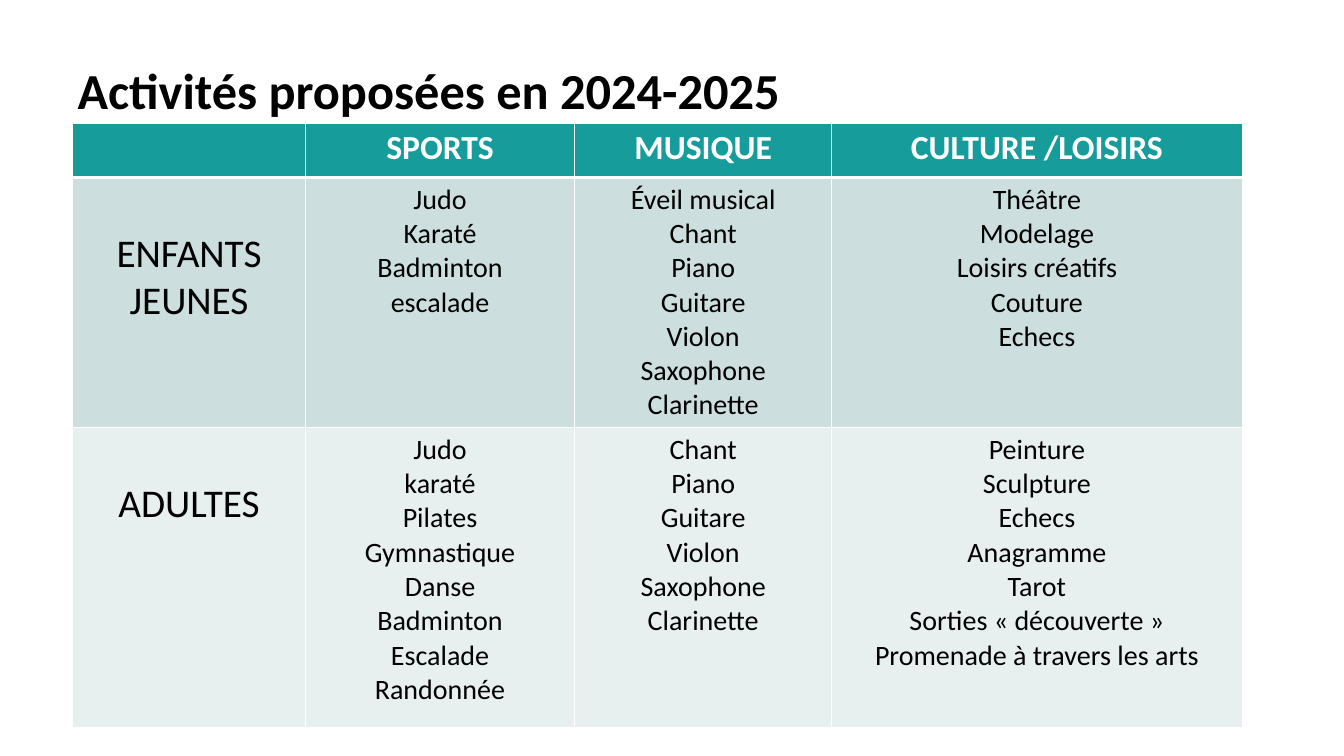
"""Build a slide with a table of the activities offered in 2024-2025."""
import pptx
import pptx.dml.color
import pptx.enum.text
import pptx.oxml
import pptx.oxml.ns
import pptx.util
from pptx.util import Inches

COLOURS = {
    "header": "169C9A",
    "youth": "CCDEDE",
    "adults": "E8EFEF",
    "white": "FFFFFF",
    "black": "000000",
}
COLUMN_WIDTHS = (2.31, 2.67, 2.55, 4.07)
ROW_HEIGHTS = (0.54, 2.47, 2.98)
ROW_FILLS = ("header", "youth", "adults")
ACTIVITIES = (
    ((), ("SPORTS",), ("MUSIQUE",), ("CULTURE /LOISIRS",)),
    (
        ("ENFANTS JEUNES",),
        ("Judo", "Karaté", "Badminton", "escalade"),
        ("Éveil musical", "Chant", "Piano", "Guitare", "Violon", "Saxophone", "Clarinette"),
        ("Théâtre", "Modelage", "Loisirs créatifs", "Couture", "Echecs"),
    ),
    (
        ("ADULTES",),
        ("Judo", "karaté", "Pilates", "Gymnastique", "Danse", "Badminton", "Escalade", "Randonnée"),
        ("Chant", "Piano", "Guitare", "Violon", "Saxophone", "Clarinette"),
        ("Peinture", "Sculpture", "Echecs", "Anagramme", "Tarot",
         "Sorties « découverte »", "Promenade à travers les arts"),
    ),
)
HEADER_FONT = {"size": 24, "bold": True, "colour": "white"}
GROUP_FONT = {"size": 28, "bold": False, "colour": "black"}
ACTIVITY_FONT = {"size": 20, "bold": False, "colour": "black"}
TITLE_FONT = {"size": 36, "bold": True, "colour": "black"}


def colour(name):
    """Return the named colour."""
    return pptx.dml.color.RGBColor.from_string(COLOURS[name])


def format_font(font, style):
    """Apply a style to a font."""
    values = {"name": "Calibri", "size": pptx.util.Pt(style["size"]), "bold": style["bold"]}
    for attribute, value in values.items():
        setattr(font, attribute, value)
    font.color.rgb = colour(style["colour"])


def add_title(page, text):
    """Place and format the slide title."""
    title = page.shapes.title
    places = {"left": 0.67, "top": 0.6, "width": 11.65, "height": 1.24}
    for attribute, value in places.items():
        setattr(title, attribute, Inches(value))
    frame = title.text_frame
    frame.word_wrap = True
    frame.auto_size = pptx.enum.text.MSO_AUTO_SIZE.NONE
    frame.vertical_anchor = pptx.enum.text.MSO_ANCHOR.TOP
    frame.text = text
    para = frame.paragraphs[0]
    para.alignment = pptx.enum.text.PP_ALIGN.LEFT
    para.line_spacing = 0.9
    format_font(para.runs[0].font, TITLE_FONT)


def add_borders(cell, top, bottom):
    """Draw white borders around a cell, with widths in points."""
    properties = cell._tc.get_or_add_tcPr()
    for side, width in {"L": 1, "R": 1, "T": top, "B": bottom}.items():
        properties.append(pptx.oxml.parse_xml(
            f'<a:ln{side} {pptx.oxml.ns.nsdecls("a")} w="{pptx.util.Pt(width)}">'
            f'<a:solidFill><a:srgbClr val="{COLOURS["white"]}"/></a:solidFill></a:ln{side}>'))


def fill_cell(cell, lines, style, fill):
    """Write centred lines in a coloured cell."""
    cell.fill.solid()
    cell.fill.fore_color.rgb = colour(fill)
    cell.text = "\n".join(lines)
    for para in cell.text_frame.paragraphs:
        para.alignment = pptx.enum.text.PP_ALIGN.CENTER
        format_font(para.font, style)
        for span in para.runs:
            format_font(span.font, style)


def add_activities(page):
    """Add the table of activities by age group."""
    table = page.shapes.add_table(
        len(ROW_HEIGHTS), len(COLUMN_WIDTHS), Inches(0.72), Inches(1.22),
        Inches(sum(COLUMN_WIDTHS)), Inches(sum(ROW_HEIGHTS))).table
    for column, width in zip(table.columns, COLUMN_WIDTHS):
        column.width = Inches(width)
    for row, height in zip(table.rows, ROW_HEIGHTS):
        row.height = Inches(height)
    for row_index, groups in enumerate(ACTIVITIES):
        for column_index, lines in enumerate(groups):
            cell = table.cell(row_index, column_index)
            style = ACTIVITY_FONT
            if row_index == 0:
                style = HEADER_FONT
            elif column_index == 0:
                style = GROUP_FONT
                cell.margin_top = Inches(0.52)
            add_borders(cell, 3 if row_index == 1 else 1, 3 if row_index == 0 else 1)
            fill_cell(cell, lines, style, ROW_FILLS[row_index])


def main():
    """Build and save the deck."""
    deck = pptx.Presentation()
    deck.slide_width = Inches(13.33)
    deck.slide_height = Inches(7.5)
    page = deck.slides.add_slide(deck.slide_layouts.get_by_name("Title Only"))
    add_title(page, "Activités proposées en 2024-2025")
    add_activities(page)
    deck.save("out.pptx")


if __name__ == "__main__":
    main()
